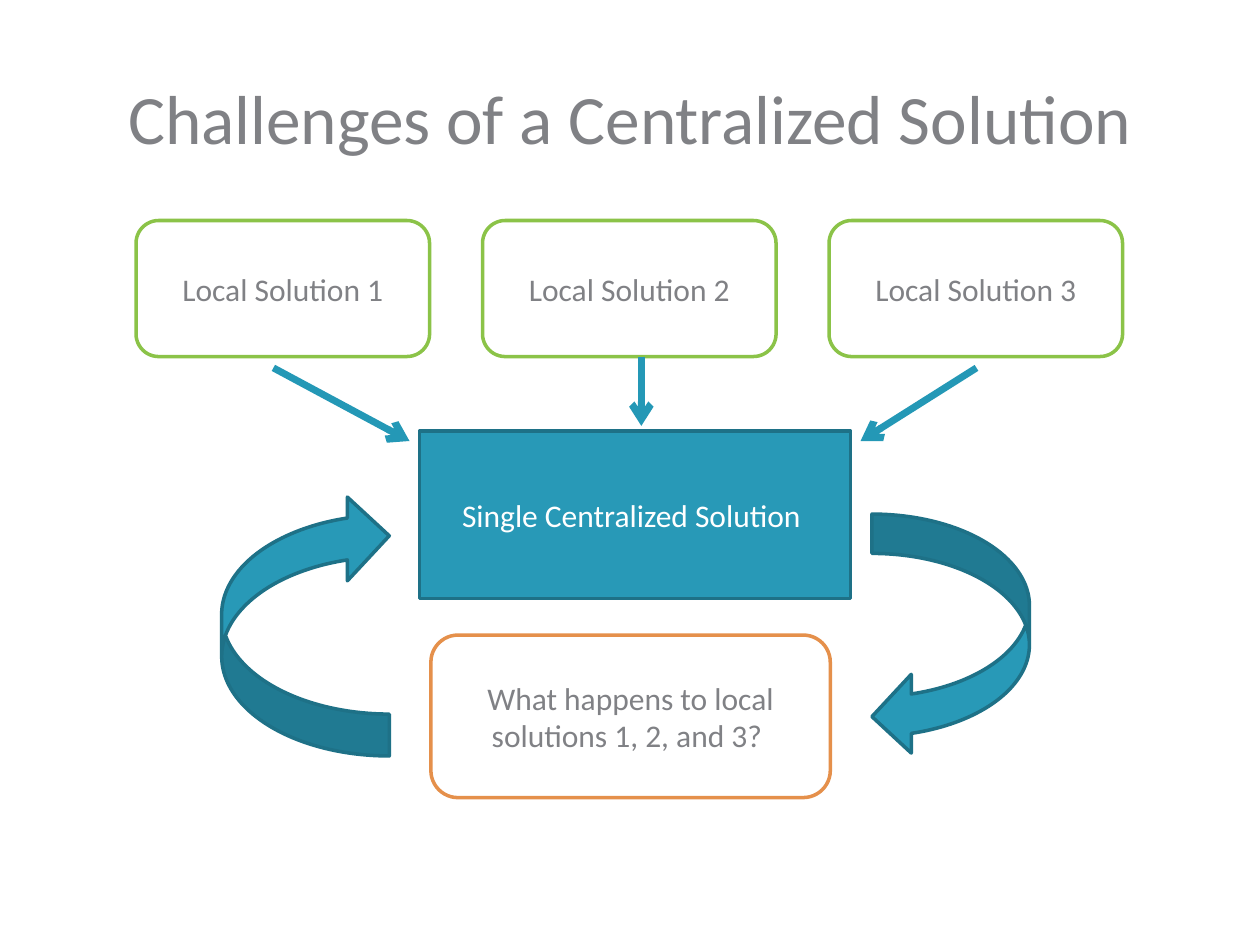
from dataclasses import dataclass

import pptx
import pptx.dml.color
import pptx.enum.shapes
import pptx.enum.text
import pptx.oxml.ns
import pptx.util
from lxml import etree

Inches = pptx.util.Inches
Pt = pptx.util.Pt
RGBColor = pptx.dml.color.RGBColor
Shape = pptx.enum.shapes.MSO_SHAPE
qn = pptx.oxml.ns.qn

WHITE = RGBColor(0xFF, 0xFF, 0xFF)
GRAY = RGBColor(0x80, 0x81, 0x85)
GREEN = RGBColor(0x8B, 0xC3, 0x48)
ORANGE = RGBColor(0xE5, 0x90, 0x4B)
TEAL = RGBColor(0x28, 0x99, 0xB7)
DARK_TEAL = RGBColor(0x1E, 0x71, 0x87)
ARROW_TEAL = RGBColor(0x24, 0x98, 0xB6)

LOCAL_LEFT, LOCAL_STEP = 1.08, 2.75


@dataclass
class Block:
    kind: Shape
    left: float
    top: float
    width: float
    height: float
    fill: RGBColor
    line: RGBColor
    text: str = ""
    text_color: RGBColor = GRAY
    flipped: bool = False


@dataclass
class Arrow:
    start: tuple[float, float]
    end: tuple[float, float]


LOCAL_SOLUTIONS = [
    Block(Shape.ROUNDED_RECTANGLE, LOCAL_LEFT + i * LOCAL_STEP, 1.75, 2.33, 1.08,
          WHITE, GREEN, f"Local Solution {i + 1}")
    for i in range(3)
]
CENTRAL_SOLUTION = Block(Shape.RECTANGLE, 3.33, 3.42, 3.42, 1.33, TEAL, DARK_TEAL,
                         "Single Centralized Solution ", WHITE)
INFLOWS = [
    Arrow((2.17, 2.92), (3.25, 3.5)),
    Arrow((7.75, 2.92), (6.83, 3.5)),
    Arrow((5.09, 2.83), (5.09, 3.38)),
]
FEEDBACK_LOOP = [
    Block(Shape.CURVED_RIGHT_ARROW, 1.76, 3.92, 1.33, 2.08, TEAL, DARK_TEAL, flipped=True),
    Block(Shape.CURVED_LEFT_ARROW, 6.92, 4.08, 1.25, 1.92, TEAL, DARK_TEAL),
]
QUESTION = Block(Shape.ROUNDED_RECTANGLE, 3.42, 5.04, 3.17, 1.29, WHITE, ORANGE,
                 "What happens to local solutions 1, 2, and 3? ")


def write_text(frame, text: str, *, size: float = 18, color: RGBColor = GRAY) -> None:
    frame.word_wrap = True
    frame.vertical_anchor = pptx.enum.text.MSO_ANCHOR.MIDDLE
    paragraph = frame.paragraphs[0]
    paragraph.alignment = pptx.enum.text.PP_ALIGN.CENTER
    run = paragraph.add_run()
    run.text = text
    run.font.name = "Calibri"
    run.font.size = Pt(size)
    run.font.color.rgb = color


def draw_block(slide, block: Block) -> None:
    shape = slide.shapes.add_shape(block.kind, Inches(block.left), Inches(block.top),
                                   Inches(block.width), Inches(block.height))
    shape.shadow.inherit = False
    shape.fill.solid()
    shape.fill.fore_color.rgb = block.fill
    shape.line.color.rgb = block.line
    shape.line.width = Pt(2)
    if block.flipped:
        shape._element.spPr.find(qn("a:xfrm")).set("flipV", "1")
    if block.text:
        write_text(shape.text_frame, block.text, color=block.text_color)


def draw_arrow(slide, arrow: Arrow) -> None:
    connector = slide.shapes.add_connector(
        pptx.enum.shapes.MSO_CONNECTOR.STRAIGHT,
        *(Inches(value) for value in arrow.start + arrow.end))
    connector.line.color.rgb = ARROW_TEAL
    connector.line.width = Pt(4)
    etree.SubElement(connector.line._get_or_add_ln(), qn("a:tailEnd"), type="arrow")
    etree.SubElement(connector._element.spPr, qn("a:effectLst"))


def main() -> None:
    deck = pptx.Presentation()
    deck.slide_width, deck.slide_height = Inches(10), Inches(7.5)
    slide = deck.slides.add_slide(deck.slide_layouts[5])

    heading = slide.shapes.title
    heading.left, heading.top = Inches(0.5), Inches(0.3)
    heading.width, heading.height = Inches(9), Inches(1.25)
    write_text(heading.text_frame, "Challenges of a Centralized Solution", size=39.6)

    for block in [*LOCAL_SOLUTIONS, CENTRAL_SOLUTION]:
        draw_block(slide, block)
    for arrow in INFLOWS:
        draw_arrow(slide, arrow)
    for block in [*FEEDBACK_LOOP, QUESTION]:
        draw_block(slide, block)

    deck.save("out.pptx")


if __name__ == "__main__":
    main()
